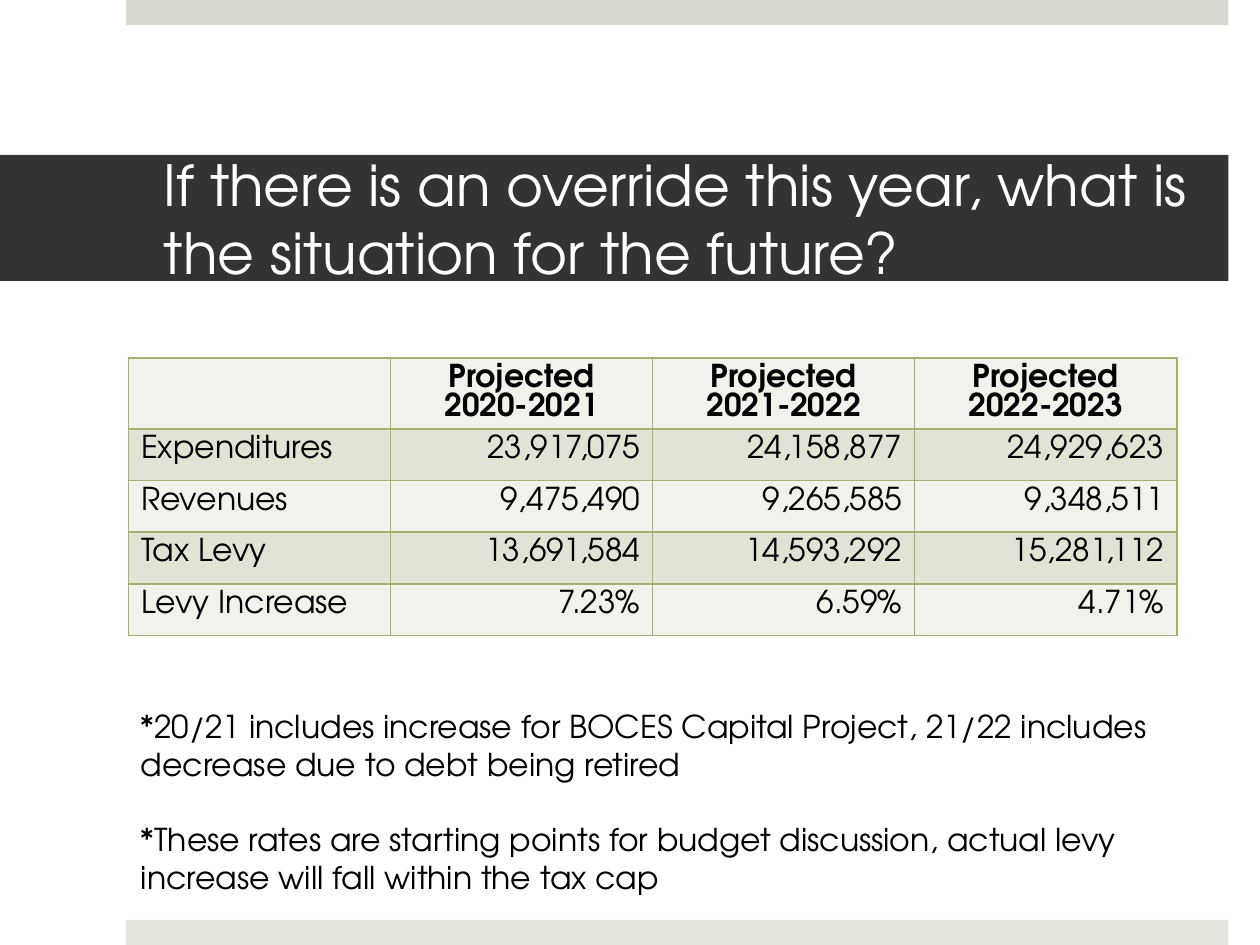
from lxml import etree
from pptx import Presentation
from pptx.dml.color import RGBColor
from pptx.enum.shapes import MSO_SHAPE
from pptx.enum.text import MSO_ANCHOR, MSO_AUTO_SIZE, PP_ALIGN
from pptx.oxml.ns import qn
from pptx.util import Inches, Pt

RECT = MSO_SHAPE.RECTANGLE
LEFT, CENTER, RIGHT = PP_ALIGN.LEFT, PP_ALIGN.CENTER, PP_ALIGN.RIGHT
MIDDLE = MSO_ANCHOR.MIDDLE
NO_FIT = MSO_AUTO_SIZE.NONE
TITLE_ONLY = 5


def rgb(value):
    return RGBColor.from_string(value)


class SlideBuilder:
    """Holds the style and the current slide, and adds each kind of element."""

    font = "TeX Gyre Adventor"
    text, border = "000000", "A2B170"
    bands = ("F0F2EB", "E0E4D5")

    def __init__(self, prs):
        self.s = prs.slides.add_slide(prs.slide_layouts[TITLE_ONLY])

    def place(self, sp, x, y, w, h):
        sp.left, sp.top, sp.width, sp.height = map(Inches, (x, y, w, h))

    def fill(self, item, color):
        item.fill.solid()
        item.fill.fore_color.rgb = rgb(color)

    def style(self, p, size, color, align=LEFT, bold=False):
        p.alignment = align
        p.font.name = self.font
        p.font.size = Pt(size)
        p.font.bold = bold
        p.font.color.rgb = rgb(color)

    def bar(self, x, y, w, h, color):
        sp = self.s.shapes.add_shape(RECT, *map(Inches, (x, y, w, h)))
        sp.shadow.inherit = False
        self.fill(sp, color)
        sp.line.fill.background()

    def title(self, text, x, y, w, h):
        sp = self.s.shapes.title
        self.place(sp, x, y, w, h)
        self.fill(sp, "333333")
        tf = sp.text_frame
        tf.text = text
        tf.word_wrap = True
        tf.auto_size = NO_FIT
        tf.vertical_anchor = MIDDLE
        tf.margin_left, tf.margin_right = Inches(1.3), Inches(0.3)
        self.style(tf.paragraphs[0], 32.4, "FFFFFF")

    def cell_border(self, cell):
        tc_pr = cell._tc.get_or_add_tcPr()
        for i, side in enumerate(("lnL", "lnR", "lnT", "lnB")):
            ln = etree.Element(qn(f"a:{side}"), w=str(Pt(1)))
            solid = etree.SubElement(ln, qn("a:solidFill"))
            etree.SubElement(solid, qn("a:srgbClr"), val=self.border)
            tc_pr.insert(i, ln)

    def table(self, rows, x, y, col_w, heights):
        n_rows, n_cols = len(rows), len(rows[0])
        size = map(Inches, (x, y, col_w * n_cols, sum(heights)))
        table = self.s.shapes.add_table(n_rows, n_cols, *size).table
        for col in table.columns:
            col.width = Inches(col_w)
        for i, (values, height) in enumerate(zip(rows, heights)):
            table.rows[i].height = Inches(height)
            for j, value in enumerate(values):
                cell = table.cell(i, j)
                cell.text = value
                self.fill(cell, self.bands[i % 2])
                self.cell_border(cell)
                p = cell.text_frame.paragraphs[0]
                align = CENTER if i == 0 else RIGHT if j else LEFT
                self.style(p, 18, self.text, align, bold=i == 0)

    def notes(self, items, x, y, w, h):
        tf = self.s.shapes.add_textbox(*map(Inches, (x, y, w, h))).text_frame
        tf.word_wrap = True
        for i, item in enumerate(items):
            p = tf.add_paragraph() if i else tf.paragraphs[0]
            p.text = item
            self.style(p, 18, self.text)
            p.space_before = Pt(21.6 if i else 0)


def main():
    prs = Presentation()
    prs.slide_width, prs.slide_height = Inches(10), Inches(7.5)
    slide = SlideBuilder(prs)
    slide.bar(1, 0, 8.75, 0.2, "D6D9CD")
    slide.bar(1, 7.3, 8.75, 0.2, "E4E6DE")
    slide.title("If there is an override this year, what is the situation for the future?",
                0, 1.23, 9.75, 1)
    rows = [
        ("", "Projected 2020-2021", "Projected 2021-2022", "Projected 2022-2023"),
        ("Expenditures", "23,917,075", "24,158,877", "24,929,623"),
        ("Revenues", "9,475,490", "9,265,585", "9,348,511"),
        ("Tax Levy", "13,691,584", "14,593,292", "15,281,112"),
        ("Levy Increase", "7.23%", "6.59%", "4.71%"),
    ]
    slide.table(rows, 1.02, 2.84, 2.08, [0.56] + [0.41] * 4)
    slide.notes([
        "*20/21 includes increase for BOCES Capital Project, 21/22 includes decrease due to debt being retired",
        "*These rates are starting points for budget discussion, actual levy increase will fall within the tax cap",
    ], 1.02, 5.56, 8.32, 1.62)
    prs.save("out.pptx")


if __name__ == "__main__":
    main()
